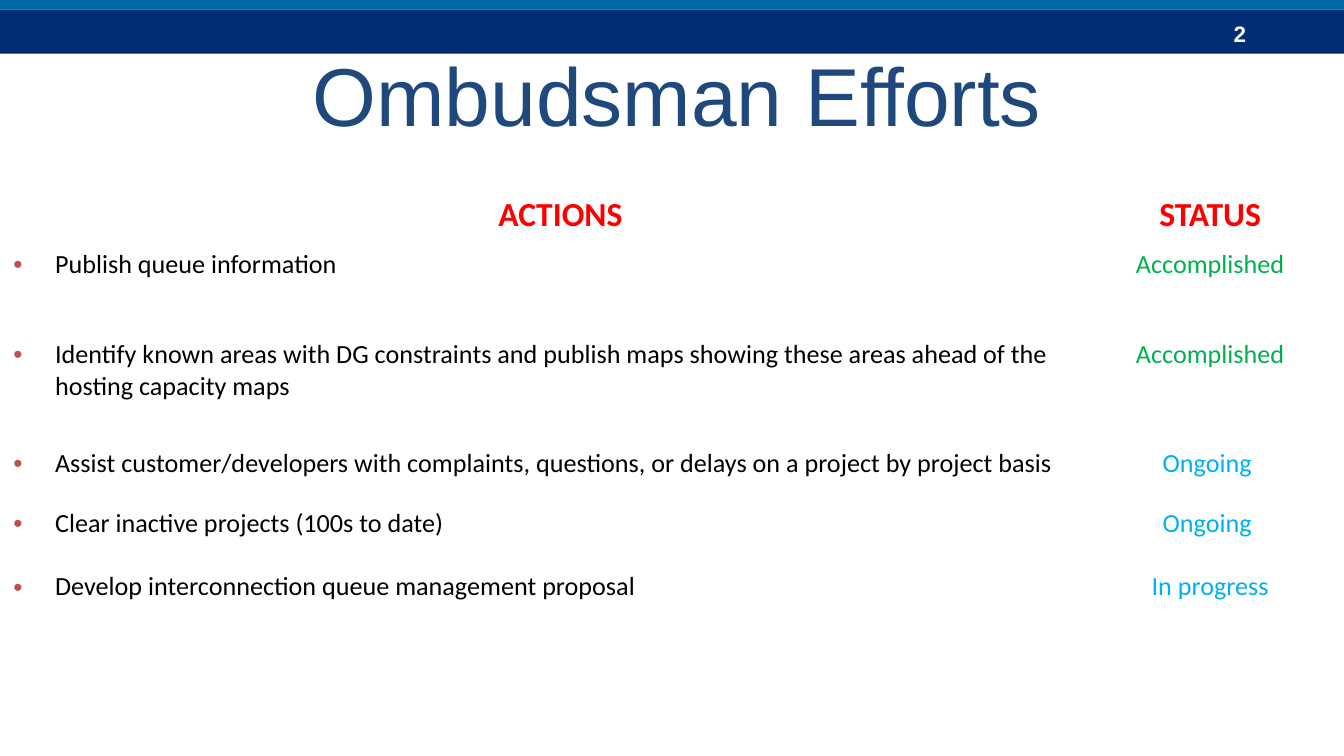
import lxml.etree
import pptx
import pptx.dml.color
import pptx.enum.shapes
import pptx.enum.text
import pptx.oxml.ns
import pptx.util

Inches = pptx.util.Inches
Pt = pptx.util.Pt
RGB = pptx.dml.color.RGBColor
ALIGN = pptx.enum.text.PP_ALIGN

NAVY = RGB(0x00, 0x2D, 0x73)
TEAL = RGB(0x00, 0x69, 0xA6)
TITLE_BLUE = RGB(0x1F, 0x49, 0x7D)
WHITE = RGB(0xFF, 0xFF, 0xFF)
BLACK = RGB(0x00, 0x00, 0x00)
RED = RGB(0xFF, 0x00, 0x00)
GREEN = RGB(0x00, 0xB0, 0x50)
SKY = RGB(0x00, 0xB0, 0xF0)
BULLET_RED = RGB(0xC0, 0x50, 0x4D)

NUMBER_FONT = {"name": "Arial", "size": Pt(12), "bold": True}
TITLE_FONT = {"name": "Arial", "size": Pt(44), "bold": False}
HEADER_FONT = {"name": "Calibri", "size": Pt(18), "bold": True}
BODY_FONT = {"name": "Calibri", "size": Pt(14), "bold": False}

SLIDE_WIDTH = 10
SLIDE_HEIGHT = SLIDE_WIDTH * 9 / 16

HEADERS = ("ACTIONS", "STATUS")
# action, status, status colour, row height
EFFORTS = [
    ("Publish queue information", "Accomplished", GREEN, 0.67),
    ("Identify known areas with DG constraints and publish maps showing "
     "these areas ahead of the hosting capacity maps", "Accomplished", GREEN, 0.81),
    ("Assist customer/developers with complaints, questions, or delays on a "
     "project by project basis", "Ongoing ", SKY, 0.45),
    ("Clear inactive projects (100s to date)", "Ongoing ", SKY, 0.47),
    ("Develop interconnection queue management proposal", "In progress", SKY, 0.34),
]
HEADER_HEIGHT = 0.4
STATUS_WIDTH = 1.33
BULLET_INDENT = 0.31


def write(frame, text, font_format, color, align=ALIGN.LEFT, bulleted=False):
    paragraph = frame.paragraphs[0]
    paragraph.alignment = align
    if bulleted:
        add_bullet(paragraph)
    run = paragraph.add_run()
    run.text = text
    for name, value in font_format.items():
        setattr(run.font, name, value)
    run.font.color.rgb = color


def add_bullet(paragraph):
    qn = pptx.oxml.ns.qn
    properties = paragraph._p.get_or_add_pPr()
    properties.set("marL", str(Inches(BULLET_INDENT)))
    properties.set("indent", str(-Inches(BULLET_INDENT)))
    bullet_color = lxml.etree.SubElement(properties, qn("a:buClr"))
    lxml.etree.SubElement(bullet_color, qn("a:srgbClr"), val=str(BULLET_RED))
    lxml.etree.SubElement(properties, qn("a:buFont"), typeface="Arial")
    lxml.etree.SubElement(properties, qn("a:buChar"), char="•")


def add_band(slide, left, top, width, height, color):
    band = slide.shapes.add_shape(
        pptx.enum.shapes.MSO_SHAPE.RECTANGLE,
        Inches(left), Inches(top), Inches(width), Inches(height))
    band.shadow.inherit = False
    band.fill.solid()
    band.fill.fore_color.rgb = color
    band.line.fill.background()


def add_label(slide, left, top, width, height):
    label = slide.shapes.add_textbox(
        Inches(left), Inches(top), Inches(width), Inches(height))
    label.text_frame.word_wrap = True
    return label.text_frame


def add_banner(slide, left, top, width, height):
    """Two stacked bands with the slide number at the right."""
    strip = 0.09
    add_band(slide, left, top + strip, width, height - strip, NAVY)
    number = add_label(slide, left + width - 0.92, top + 0.12, 0.75, 0.3)
    write(number, "2", NUMBER_FONT, WHITE)
    add_band(slide, left, top, width, strip, TEAL)


def add_title(slide, left, top, width, height):
    title = add_label(slide, left, top, width, height)
    title.vertical_anchor = pptx.enum.text.MSO_ANCHOR.MIDDLE
    write(title, "Ombudsman Efforts ", TITLE_FONT, TITLE_BLUE, ALIGN.CENTER)


def add_efforts_table(slide, left, top, width):
    heights = [HEADER_HEIGHT] + [effort[-1] for effort in EFFORTS]
    table = slide.shapes.add_table(
        len(heights), len(HEADERS), Inches(left), Inches(top),
        Inches(width), Inches(sum(heights))).table
    table.first_row = table.horz_banding = False
    for column, column_width in zip(table.columns, (width - STATUS_WIDTH, STATUS_WIDTH)):
        column.width = Inches(column_width)
    for row, height in zip(table.rows, heights):
        row.height = Inches(height)
    for cell in table.iter_cells():
        cell.fill.solid()
        cell.fill.fore_color.rgb = WHITE

    for column, header in enumerate(HEADERS):
        write(table.cell(0, column).text_frame, header, HEADER_FONT, RED, ALIGN.CENTER)
    for row, (action, status, status_color, _) in enumerate(EFFORTS, start=1):
        write(table.cell(row, 0).text_frame, action, BODY_FONT, BLACK, bulleted=True)
        write(table.cell(row, 1).text_frame, status, BODY_FONT, status_color, ALIGN.CENTER)


def main():
    deck = pptx.Presentation()
    deck.slide_width, deck.slide_height = Inches(SLIDE_WIDTH), Inches(SLIDE_HEIGHT)
    slide = deck.slides.add_slide(deck.slide_layouts[6])
    add_banner(slide, 0, -0.02, SLIDE_WIDTH, 0.42)
    add_title(slide, 0.5, 0.23, 9.25, 0.94)
    add_efforts_table(slide, 0, 1.4, 9.67)
    deck.save("out.pptx")


if __name__ == "__main__":
    main()
